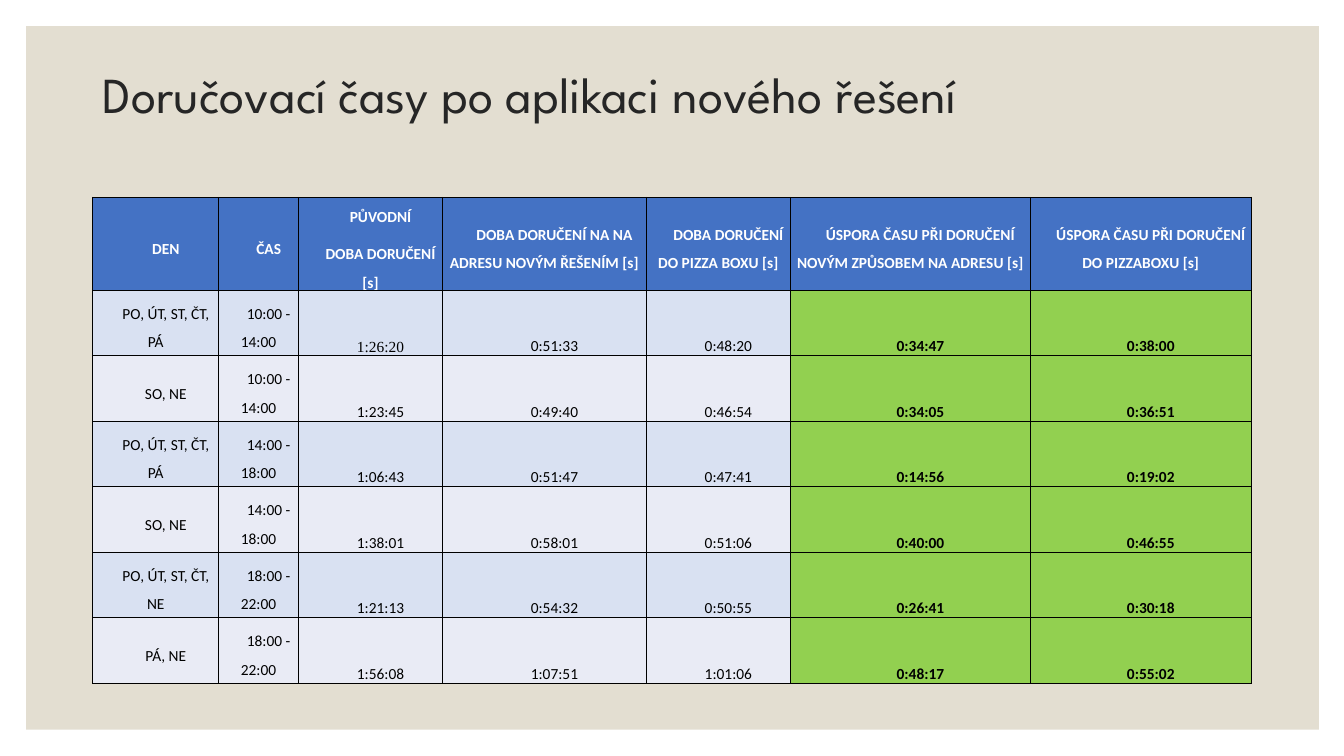
from lxml import etree
from pptx import Presentation
from pptx import util as u
from pptx.dml import color
from pptx.enum import shapes, text
from pptx.oxml import ns

COLUMN_WIDTHS = [1.25, 0.79, 1.43, 2.02, 1.43, 2.38, 2.19]
HEADER_HEIGHT, ROW_HEIGHT = 0.92, 0.65
HEADERS = [
    "DEN", "ČAS", "PŮVODNÍ\nDOBA DORUČENÍ [s]",
    "DOBA DORUČENÍ NA NA ADRESU NOVÝM ŘEŠENÍM [s]",
    "DOBA DORUČENÍ DO PIZZA BOXU [s]",
    "ÚSPORA ČASU PŘI DORUČENÍ NOVÝM ZPŮSOBEM NA ADRESU [s]",
    "ÚSPORA ČASU PŘI DORUČENÍ DO PIZZABOXU [s]",
]
DELIVERY_TIMES = [
    ["PO, ÚT, ST, ČT, PÁ", "10:00 - 14:00", "1:26:20", "0:51:33", "0:48:20", "0:34:47", "0:38:00"],
    ["SO, NE", "10:00 - 14:00", "1:23:45", "0:49:40", "0:46:54", "0:34:05", "0:36:51"],
    ["PO, ÚT, ST, ČT, PÁ", "14:00 - 18:00", "1:06:43", "0:51:47", "0:47:41", "0:14:56", "0:19:02"],
    ["SO, NE", "14:00 - 18:00", "1:38:01", "0:58:01", "0:51:06", "0:40:00", "0:46:55"],
    ["PO, ÚT, ST, ČT, NE", "18:00 - 22:00", "1:21:13", "0:54:32", "0:50:55", "0:26:41", "0:30:18"],
    ["PÁ, NE", "18:00 - 22:00", "1:56:08", "1:07:51", "1:01:06", "0:48:17", "0:55:02"],
]
FIRST_TIME_COLUMN, FIRST_SAVING_COLUMN = 2, 5


def set_attributes(target, values):
    """Set every attribute named in a dict of values."""
    for name, value in values.items():
        setattr(target, name, value)


def paint(fill_or_font, hex_color):
    """Colour a fill or a font with a hex string."""
    if hasattr(fill_or_font, "solid"):
        fill_or_font.solid()
        fill_or_font.fore_color.rgb = color.RGBColor.from_string(hex_color)
    else:
        fill_or_font.color.rgb = color.RGBColor.from_string(hex_color)


def add_panel(slide):
    """Add the beige panel behind the content."""
    panel = slide.shapes.add_shape(
        shapes.MSO_SHAPE.RECTANGLE,
        u.Inches(0.26), u.Inches(0.26), u.Inches(12.82), u.Inches(6.98))
    panel.shadow.inherit = False
    paint(panel.fill, "E3DED1")
    panel.line.fill.background()


def add_title(slide, wording):
    """Add the slide title."""
    title = slide.shapes.add_textbox(
        u.Inches(0.92), u.Inches(0.37), u.Inches(11.49), u.Inches(1.18))
    set_attributes(title.text_frame, {
        "word_wrap": True, "vertical_anchor": text.MSO_ANCHOR.MIDDLE})
    paragraph = title.text_frame.paragraphs[0]
    set_attributes(paragraph, {"text": wording, "line_spacing": 0.9})
    set_attributes(paragraph.font, {"name": "League Spartan", "size": u.Pt(36)})
    paint(paragraph.font, "262626")


def add_borders(cell):
    """Draw a thin black line on each side of a cell."""
    properties = cell._tc.get_or_add_tcPr()
    for side in ("a:lnL", "a:lnR", "a:lnT", "a:lnB"):
        line = etree.SubElement(properties, ns.qn(side), w=str(u.Pt(1)))
        fill = etree.SubElement(line, ns.qn("a:solidFill"))
        etree.SubElement(fill, ns.qn("a:srgbClr"), val="000000")


def fill_cell(cell, wording, fill, font_color, bold, anchor, font_name):
    """Write and format one table cell."""
    add_borders(cell)
    paint(cell.fill, fill)
    set_attributes(cell, {
        "text": wording, "vertical_anchor": anchor,
        "margin_left": u.Inches(0.04), "margin_right": u.Inches(0.04),
        "margin_top": u.Inches(0.01), "margin_bottom": u.Inches(0)})
    for paragraph in cell.text_frame.paragraphs:
        set_attributes(paragraph, {
            "alignment": text.PP_ALIGN.CENTER, "line_spacing": 1.5,
            "space_after": u.Pt(6)})
        properties = paragraph._p.get_or_add_pPr()
        properties.set("marL", "0")
        properties.set("indent", str(u.Inches(0.2)))
        for run in paragraph.runs:
            set_attributes(run.font, {"name": font_name, "size": u.Pt(11), "bold": bold})
            paint(run.font, font_color)


def add_times_table(slide):
    """Add the table of delivery times and savings."""
    rows = [HEADERS] + DELIVERY_TIMES
    height = HEADER_HEIGHT + ROW_HEIGHT * len(DELIVERY_TIMES)
    table = slide.shapes.add_table(
        len(rows), len(HEADERS), u.Inches(0.92), u.Inches(1.96),
        u.Inches(sum(COLUMN_WIDTHS)), u.Inches(height)).table
    set_attributes(table, {"first_row": True, "horz_banding": False})
    for column, width in zip(table.columns, COLUMN_WIDTHS):
        column.width = u.Inches(width)
    for row_index, values in enumerate(rows):
        is_header = row_index == 0
        table.rows[row_index].height = u.Inches(HEADER_HEIGHT if is_header else ROW_HEIGHT)
        band = "D9E1F2" if row_index % 2 else "E9EBF5"
        for column_index, wording in enumerate(values):
            is_saving = column_index >= FIRST_SAVING_COLUMN
            is_time = not is_header and column_index >= FIRST_TIME_COLUMN
            is_first_time = (row_index, column_index) == (1, FIRST_TIME_COLUMN)
            fill_cell(
                table.cell(row_index, column_index), wording,
                fill="4472C4" if is_header else "92D050" if is_saving else band,
                font_color="FFFFFF" if is_header else "000000",
                bold=is_header or is_saving,
                anchor=text.MSO_ANCHOR.BOTTOM if is_time else text.MSO_ANCHOR.MIDDLE,
                font_name="Times New Roman" if is_first_time else "Calibri")


def main():
    """Build the slide and save the presentation."""
    presentation = Presentation()
    set_attributes(presentation, {
        "slide_width": u.Inches(13.33), "slide_height": u.Inches(7.5)})
    slide = presentation.slides.add_slide(presentation.slide_layouts[6])
    paint(slide.background.fill, "FFFFFF")
    add_panel(slide)
    add_title(slide, "Doručovací časy po aplikaci nového řešení")
    add_times_table(slide)
    presentation.save("out.pptx")


if __name__ == "__main__":
    main()
